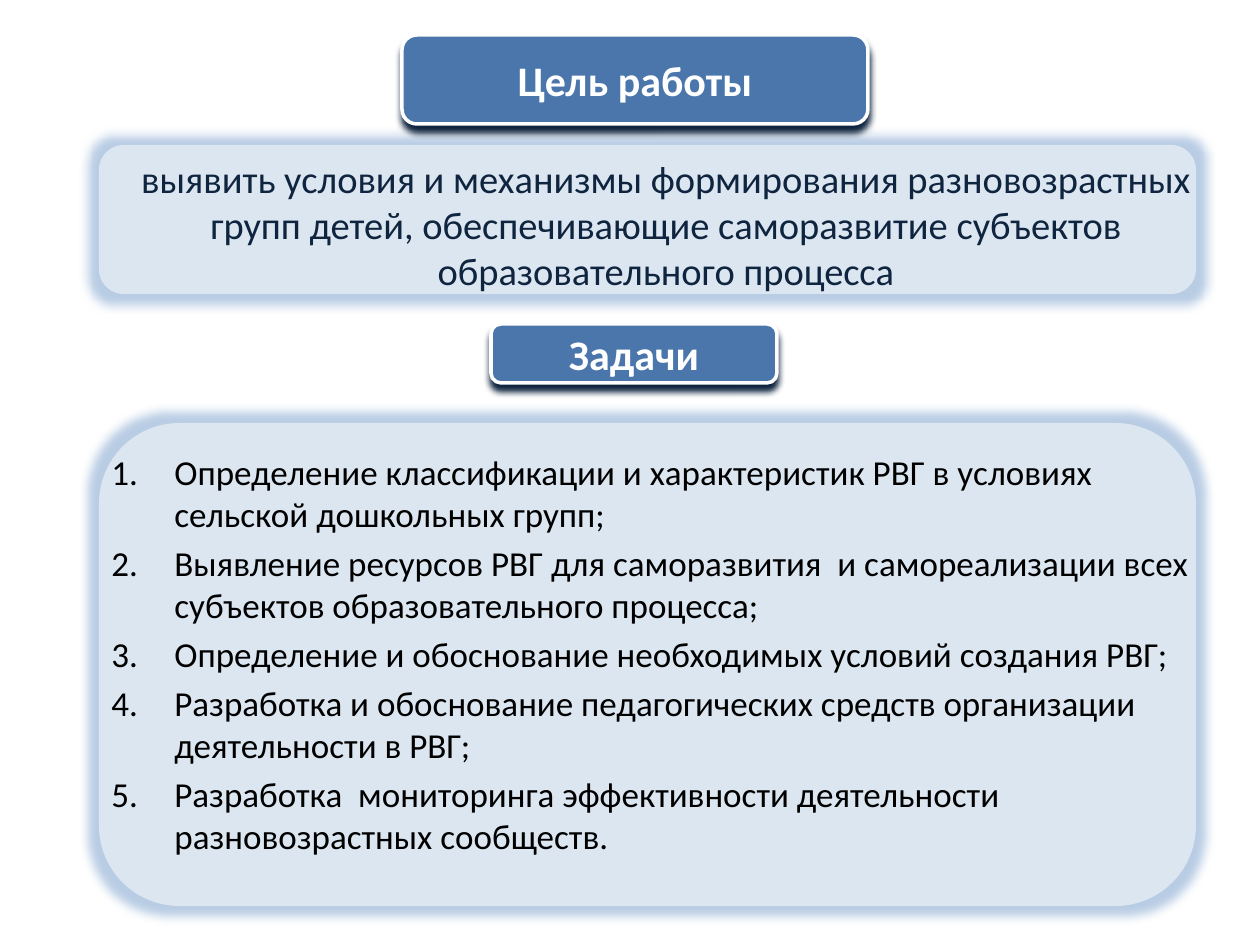
from dataclasses import dataclass

from lxml.etree import SubElement
from pptx import Presentation
from pptx.dml.color import RGBColor
from pptx.enum.shapes import MSO_SHAPE
from pptx.enum.text import MSO_ANCHOR, PP_ALIGN
from pptx.oxml.ns import qn
from pptx.util import Emu, Pt

PX_PER_INCH = 126
EMU_PER_PX = 914400 / PX_PER_INCH

WHITE = RGBColor(0xFF, 0xFF, 0xFF)
BLACK = RGBColor(0x00, 0x00, 0x00)
NAVY = RGBColor(0x0F, 0x24, 0x3E)
BUTTON_BLUE = RGBColor(0x4A, 0x76, 0xAB)
PANEL_BLUE = RGBColor(0xDC, 0xE6, 0xF1)
GLOW_BLUE = RGBColor(0xB8, 0xCC, 0xE4)

HEADING_FONT = {"name": "Calibri", "size": Pt(24), "bold": True}
GOAL_FONT = {"name": "Calibri", "size": Pt(22)}
TASK_FONT = {"name": "Calibri", "size": Pt(20)}


@dataclass(frozen=True)
class Box:
    left: int
    top: int
    width: int
    height: int

    def emu(self) -> list[Emu]:
        return [px(v) for v in (self.left, self.top, self.width, self.height)]


@dataclass(frozen=True)
class Heading:
    text: str
    box: Box


PANELS = [Box(99, 423, 1097, 483), Box(99, 145, 1097, 149)]
GOAL_BOX = Box(99, 145, 1134, 158)
TASKS_BOX = Box(99, 444, 1134, 441)
HEADINGS = [
    Heading("Цель работы", Box(402, 35, 466, 89)),
    Heading("Задачи", Box(491, 324, 286, 59)),
]
GOAL = (
    "выявить условия и механизмы формирования разновозрастных групп детей, "
    "обеспечивающие саморазвитие субъектов образовательного процесса"
)
TASKS = [
    "Определение классификации и характеристик РВГ в условиях сельской дошкольных групп;",
    "Выявление ресурсов РВГ для саморазвития  и самореализации всех субъектов образовательного процесса;",
    "Определение и обоснование необходимых условий создания РВГ;",
    "Разработка и обоснование педагогических средств организации деятельности в РВГ;",
    "Разработка  мониторинга эффективности деятельности разновозрастных сообществ.",
]


def px(value: float) -> Emu:
    return Emu(round(value * EMU_PER_PX))


def format_font(font, values: dict, color: RGBColor) -> None:
    for name, value in values.items():
        setattr(font, name, value)
    font.color.rgb = color


def add_effect(shape, tag: str, color: RGBColor, **attributes: int) -> None:
    shape.shadow.inherit = False
    effects = shape._element.spPr.find(qn("a:effectLst"))
    effect = SubElement(effects, qn(tag), {k: str(v) for k, v in attributes.items()})
    SubElement(effect, qn("a:srgbClr"), val=str(color))


def add_rounded(slide, box: Box, fill: RGBColor):
    shape = slide.shapes.add_shape(MSO_SHAPE.ROUNDED_RECTANGLE, *box.emu())
    shape.fill.solid()
    shape.fill.fore_color.rgb = fill
    return shape


def add_panel(slide, box: Box) -> None:
    panel = add_rounded(slide, box, PANEL_BLUE)
    panel.line.fill.background()
    add_effect(panel, "a:glow", GLOW_BLUE, rad=Pt(11))


def write_centred(frame, text: str, font: dict, color: RGBColor) -> None:
    frame.word_wrap = True
    frame.vertical_anchor = MSO_ANCHOR.MIDDLE
    paragraph = frame.paragraphs[0]
    paragraph.text = text
    paragraph.alignment = PP_ALIGN.CENTER
    format_font(paragraph.font, font, color)


def add_heading(slide, heading: Heading) -> None:
    button = add_rounded(slide, heading.box, BUTTON_BLUE)
    button.line.color.rgb = WHITE
    button.line.width = Pt(2)
    add_effect(button, "a:outerShdw", NAVY, blurRad=Pt(4), dist=Pt(4), dir=90 * 60000)
    write_centred(button.text_frame, heading.text, HEADING_FONT, WHITE)


def add_tasks(slide, box: Box, tasks: list[str]) -> None:
    frame = slide.shapes.add_textbox(*box.emu()).text_frame
    frame.word_wrap = True
    indent = px(63)
    for index, task in enumerate(tasks):
        paragraph = frame.add_paragraph() if index else frame.paragraphs[0]
        paragraph.text = task
        if index:
            paragraph.space_before = Pt(4)
        properties = paragraph._p.get_or_add_pPr()
        properties.set("marL", str(indent))
        properties.set("indent", str(-indent))
        SubElement(properties, qn("a:buFont"), typeface="+mj-lt")
        SubElement(properties, qn("a:buAutoNum"), type="arabicPeriod")
        format_font(paragraph.font, TASK_FONT, BLACK)


def main() -> None:
    presentation = Presentation()
    presentation.slide_width = px(10 * PX_PER_INCH)
    presentation.slide_height = px(7.5 * PX_PER_INCH)
    slide = presentation.slides.add_slide(presentation.slide_layouts[6])

    # Glowing panels behind the text
    for panel in PANELS:
        add_panel(slide, panel)

    # Goal and numbered tasks
    goal = slide.shapes.add_textbox(*GOAL_BOX.emu())
    write_centred(goal.text_frame, GOAL, GOAL_FONT, NAVY)
    add_tasks(slide, TASKS_BOX, TASKS)

    # Section headings
    for heading in HEADINGS:
        add_heading(slide, heading)

    presentation.save("out.pptx")


if __name__ == "__main__":
    main()
